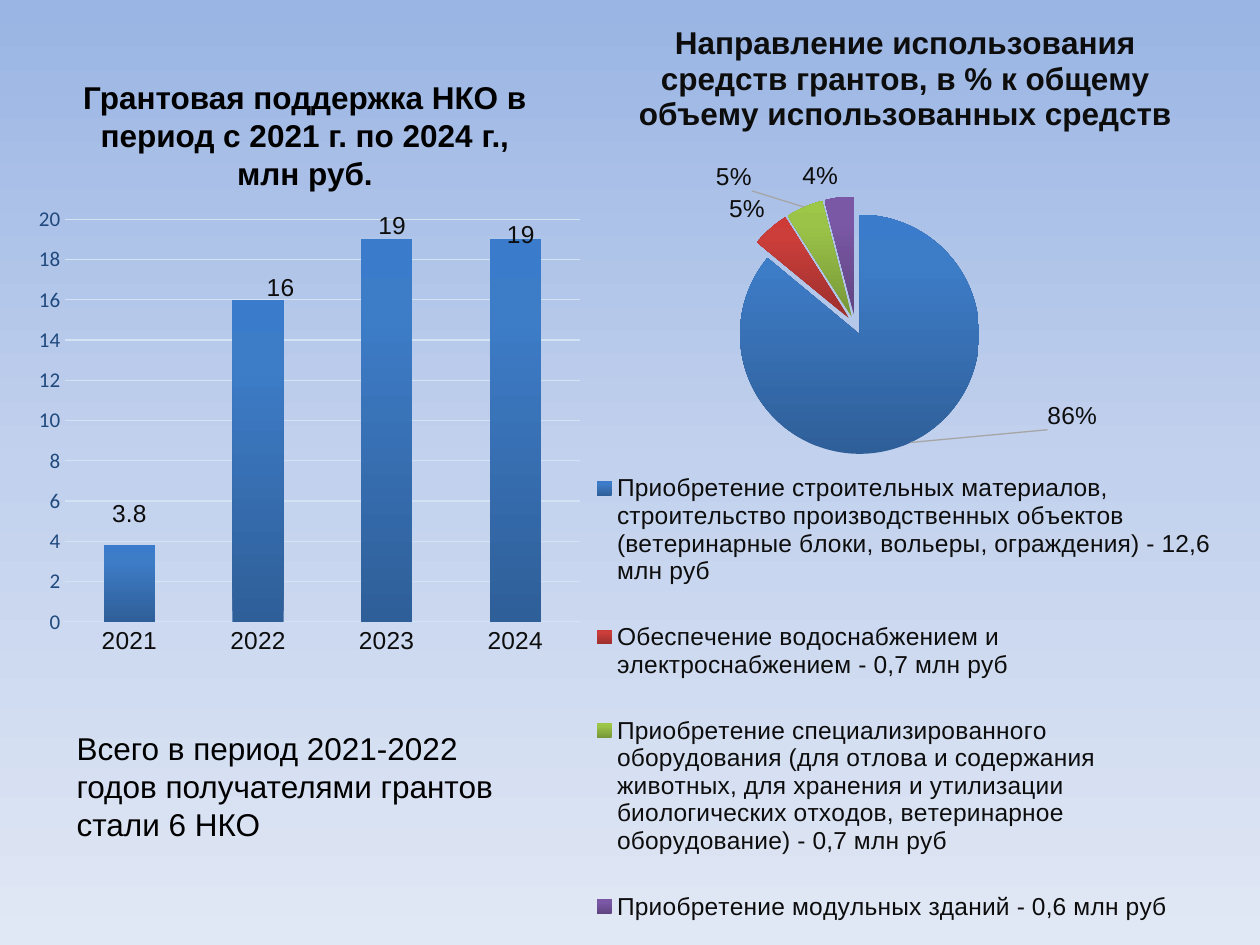
"""Build a slide on grant support: a column chart by year and a pie of how grants were spent."""
from lxml.etree import SubElement
from pptx import Presentation
from pptx.chart.data import CategoryChartData
from pptx.dml.color import RGBColor
from pptx.enum.chart import XL_CHART_TYPE, XL_LABEL_POSITION, XL_LEGEND_POSITION, XL_TICK_MARK
from pptx.enum.text import MSO_ANCHOR, PP_ALIGN
from pptx.oxml import parse_xml
from pptx.oxml.ns import nsdecls, qn
from pptx.util import Pt

COLORS = {
    "text": "000000", "label": "0D0D0D", "scale": "1F497D", "grid": "D4E3F4", "leader": "A6A6A6",
    "sky": ["9AB5E4", "C2D1ED", "E1E8F5"],
    "blue": ["2F5F99", "3D7CC7", "3A7CCB"],
    "red": ["9C2F2D", "CB3E3A", "CE3B37"],
    "green": ["779737", "9BC348", "9DC746"],
    "purple": ["5F4480", "7B58A6", "7C57A8"],
}
PIE_BOX = (317.5, 9.4, 402.5, 538.6)
COLUMN_BOX = (15.1, 113, 322.6, 266.4)


def paint_gradient(fill, owner, name, middle, angle):
    fill.solid()
    solid = next(owner.iter(qn("a:solidFill")))
    stops = "".join(
        f'<a:gs pos="{place * 1000}"><a:srgbClr val="{color}"/></a:gs>'
        for place, color in zip((0, middle, 100), COLORS[name]))
    solid.getparent().replace(solid, parse_xml(
        f'<a:gradFill {nsdecls("a")} rotWithShape="1"><a:gsLst>{stops}</a:gsLst>'
        f'<a:lin ang="{angle * 60000}" scaled="0"/></a:gradFill>'))


def place_part(parent, index, **settings):
    for old in parent.findall(qn("c:layout")):
        parent.remove(old)
    layout = parse_xml(f'<c:layout {nsdecls("c")}><c:manualLayout/></c:layout>')
    for tag, value in settings.items():
        SubElement(layout[0], qn(f"c:{tag}")).set("val", str(value))
    parent.insert(index, layout)


presentation = Presentation()
presentation.slide_width, presentation.slide_height = Pt(720), Pt(540)
slide = presentation.slides.add_slide(presentation.slide_layouts[6])
paint_gradient(slide.background.fill, slide._element, "sky", 50, 90)

for words, box, anchor, align, bold in (
    ("Грантовая поддержка НКО в период с 2021 г. по 2024 г., млн руб.",
     (31, 26, 286.5, 87), MSO_ANCHOR.BOTTOM, PP_ALIGN.CENTER, True),
    ("Всего в период 2021-2022 годов получателями грантов стали 6 НКО",
     (36.7, 413.3, 259.2, 83.5), MSO_ANCHOR.TOP, PP_ALIGN.LEFT, False),
):
    frame = slide.shapes.add_textbox(*map(Pt, box)).text_frame
    frame.word_wrap = True
    frame.vertical_anchor = anchor
    paragraph = frame.paragraphs[0]
    paragraph.text = words
    paragraph.alignment = align
    paragraph.font.name, paragraph.font.size, paragraph.font.bold = "Arial", Pt(18), bold
    paragraph.font.color.rgb = RGBColor.from_string(COLORS["text"])

spending = CategoryChartData()
spending.categories = [
    "Приобретение строительных материалов, строительство производственных объектов "
    "(ветеринарные блоки, вольеры, ограждения) - 12,6 млн руб",
    "Обеспечение водоснабжением и электроснабжением - 0,7 млн руб",
    "Приобретение специализированного оборудования (для отлова и содержания животных, "
    "для хранения и утилизации биологических отходов, ветеринарное оборудование) - 0,7 млн руб",
    "Приобретение модульных зданий - 0,6 млн руб",
]
spending.add_series("Series 1", (86, 5, 5, 4))
pie = slide.shapes.add_chart(XL_CHART_TYPE.PIE, *map(Pt, PIE_BOX), spending).chart

grants = CategoryChartData()
grants.categories = ["2021", "2022", "2023", "2024"]
grants.add_series("Series 1", (3.8, 16, 19, 19))
columns = slide.shapes.add_chart(XL_CHART_TYPE.COLUMN_STACKED, *map(Pt, COLUMN_BOX), grants).chart

for chart, percent, position, box, area, offsets in (
    (pie, True, XL_LABEL_POSITION.OUTSIDE_END, PIE_BOX, (54.3, 102.9, 234.3, 147.6),
     {0: (0.19, -0.05), 2: (-0.07, -0.01)}),
    (columns, False, XL_LABEL_POSITION.CENTER, COLUMN_BOX, (22.1, 12.4, 294, 230),
     {0: (0, -0.15), 1: (0.04, -0.37), 2: (0.01, -0.44), 3: (0.01, -0.42)}),
):
    chart.font.name, chart.font.size = "Calibri", Pt(10)
    chart.font.color.rgb = RGBColor.from_string(COLORS["text"])
    series = chart.plots[0].series[0]
    chart.plots[0].vary_by_categories = percent
    labels = series.data_labels
    labels.show_value, labels.show_percentage = not percent, percent
    labels.position = position
    if percent:
        labels.number_format, labels.number_format_is_linked = "0%", False
    fonts = [labels.font]
    for index in offsets:
        label = series.points[index].data_label
        label.position = position
        fonts.append(label.font)
    for font in fonts:
        font.name, font.size = "Arial", Pt(14)
        font.color.rgb = RGBColor.from_string(COLORS["label"])
    for label, (x, y) in zip(series._element.iter(qn("c:dLbl")), offsets.values()):
        label.find(qn("c:showVal")).set("val", str(int(not percent)))
        label.find(qn("c:showPercent")).set("val", str(int(percent)))
        place_part(label, 1, x=x, y=y)
    for leader in series._element.iter(qn("c:showLeaderLines")):
        leader.set("val", str(int(percent)))
    x, y, w, h = area
    place_part(chart._chartSpace.chart.plotArea, 0, layoutTarget="inner", xMode="edge",
               yMode="edge", x=x / box[2], y=y / box[3], w=w / box[2], h=h / box[3])

slices = pie.plots[0].series[0]
for index, name in enumerate(("blue", "red", "green", "purple")):
    paint_gradient(slices.points[index].format.fill, slices._element, name, 80, 270)
slices._element.find(qn("c:dPt")).addprevious(
    parse_xml(f'<c:explosion {nsdecls("c")} val="8"/>'))
next(slices._element.iter(qn("c:showLeaderLines"))).addnext(parse_xml(
    f'<c:leaderLines {nsdecls("c", "a")}><c:spPr><a:ln w="9525"><a:solidFill>'
    f'<a:srgbClr val="{COLORS["leader"]}"/></a:solidFill></a:ln></c:spPr></c:leaderLines>'))

pie.has_title = True
heading = pie.chart_title.text_frame.paragraphs[0]
heading.text = "Направление использования средств грантов, в % к общему объему использованных средств"
heading.font.name, heading.font.size, heading.font.bold = "Arial", Pt(18), True
heading.font.color.rgb = RGBColor.from_string(COLORS["label"])
place_part(pie.chart_title._element, 1, xMode="edge", yMode="edge", x=0.11, y=0)
pie.has_legend = True
legend = pie.legend
legend.position = XL_LEGEND_POSITION.BOTTOM
legend.include_in_layout = False
legend.font.name, legend.font.size = "Arial", Pt(14)
legend.font.color.rgb = RGBColor.from_string(COLORS["label"])
place_part(legend._element, 1, xMode="edge", yMode="edge",
           x=22 / PIE_BOX[2], y=240 / PIE_BOX[3], w=0.88, h=299 / PIE_BOX[3])

columns.has_title = columns.has_legend = False
bars = columns.plots[0]
bars.gap_width, bars.overlap = 150, 100
bar_fill = bars.series[0].format.fill
paint_gradient(bar_fill, bars.series[0]._element.find(qn("c:spPr")), "blue", 80, 270)

years, scale = columns.category_axis, columns.value_axis
for axis, family, size, color in ((years, "Arial", 14, "label"), (scale, "Calibri", 12, "scale")):
    axis.major_tick_mark = axis.minor_tick_mark = XL_TICK_MARK.NONE
    axis.tick_labels.font.name, axis.tick_labels.font.size = family, Pt(size)
    axis.tick_labels.font.color.rgb = RGBColor.from_string(COLORS[color])
scale.minimum_scale, scale.maximum_scale, scale.major_unit = 0, 20, 2
scale.format.line.fill.background()
for line in (years.format.line, scale.major_gridlines.format.line):
    line.color.rgb = RGBColor.from_string(COLORS["grid"])
    line.width = Pt(0.75)

presentation.save("out.pptx")
